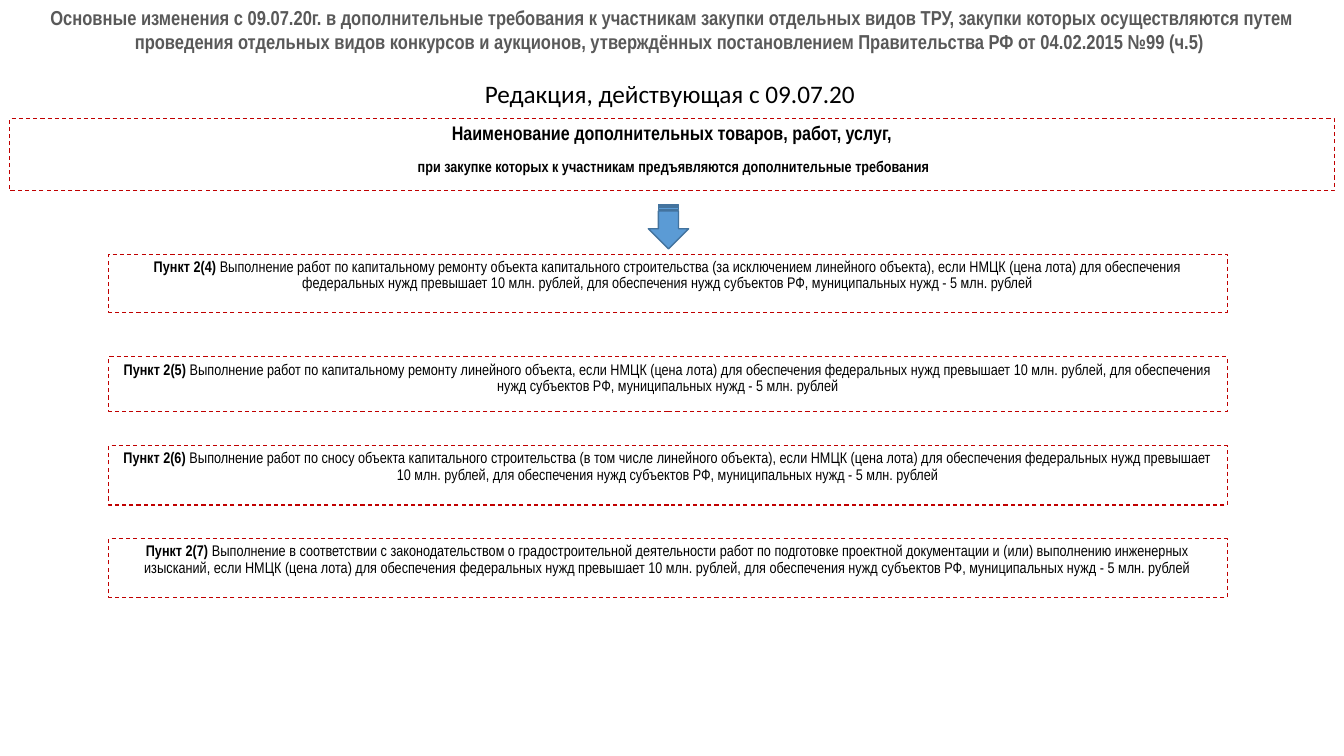
from pptx import Presentation
from pptx.dml.color import RGBColor
from pptx.enum.dml import MSO_LINE
from pptx.enum.shapes import MSO_SHAPE
from pptx.enum.text import MSO_ANCHOR, MSO_AUTO_SIZE, PP_ALIGN
from pptx.util import Inches, Pt

RECTANGLE = MSO_SHAPE.RECTANGLE
STRIPED_ARROW = MSO_SHAPE.STRIPED_RIGHT_ARROW
DASH = MSO_LINE.DASH
CENTER = PP_ALIGN.CENTER
LEFT = PP_ALIGN.LEFT
TOP = MSO_ANCHOR.TOP
BOTTOM = MSO_ANCHOR.BOTTOM
FIT_SHAPE = MSO_AUTO_SIZE.SHAPE_TO_FIT_TEXT

COLORS = {
    "title": "595959",
    "text": "000000",
    "frame": "C00000",
    "arrow": "5B9BD5",
    "arrow_line": "43739E",
}
NARROW = "Arial Narrow"
BODY = "Calibri"

TITLE = (
    "Основные изменения с 09.07.20г. в дополнительные требования к участникам "
    "закупки отдельных видов ТРУ, закупки которых осуществляются путем проведения "
    "отдельных видов конкурсов и аукционов, утверждённых постановлением "
    "Правительства РФ от 04.02.2015 №99 (ч.5) "
)
THRESHOLD = (
    ", если НМЦК (цена лота) для обеспечения федеральных нужд превышает "
    "10 млн. рублей, для обеспечения нужд субъектов РФ, муниципальных нужд "
    "- 5 млн. рублей"
)
# Clause number, top, height, kind of work
CLAUSES = [
    ("2(4)", 2.52, 0.58, "Выполнение работ по капитальному ремонту объекта "
     "капитального строительства (за исключением линейного объекта)"),
    ("2(5)", 3.54, 0.54, "Выполнение работ по капитальному ремонту линейного объекта"),
    ("2(6)", 4.42, 0.59, "Выполнение работ по сносу объекта капитального "
     "строительства (в том числе линейного объекта)"),
    ("2(7)", 5.34, 0.59, "Выполнение в соответствии с законодательством о "
     "градостроительной деятельности работ по подготовке проектной документации "
     "и (или) выполнению инженерных изысканий"),
]


class SlideBuilder:
    def __init__(self, slide):
        self.slide = slide

    def color(self, name):
        return RGBColor.from_string(COLORS[name])

    def style(self, paragraph, size, font=NARROW, color="text", align=CENTER):
        paragraph.alignment = align
        paragraph.font.size = Pt(size)
        paragraph.font.name = font
        paragraph.font.color.rgb = self.color(color)

    def text(self, left, top, width, height, text, size, font, color, align,
             anchor=TOP, bold=False, wrap=True):
        box = self.slide.shapes.add_textbox(
            Inches(left), Inches(top), Inches(width), Inches(height))
        frame = box.text_frame
        frame.word_wrap = wrap
        frame.vertical_anchor = anchor
        if not wrap:
            frame.auto_size = FIT_SHAPE
        paragraph = frame.paragraphs[0]
        paragraph.text = text
        self.style(paragraph, size, font, color, align)
        paragraph.font.bold = bold

    def shape(self, kind, left, top, width, height, line, line_width):
        shape = self.slide.shapes.add_shape(
            kind, Inches(left), Inches(top), Inches(width), Inches(height))
        shape.shadow.inherit = False
        shape.line.color.rgb = self.color(line)
        shape.line.width = Pt(line_width)
        return shape

    def framed(self, left, top, width, height, paragraphs):
        """Each paragraph is a size and a list of (text, bold) runs."""
        shape = self.shape(RECTANGLE, left, top, width, height, "frame", 0.75)
        shape.fill.background()
        shape.line.dash_style = DASH
        frame = shape.text_frame
        frame.word_wrap = True
        frame.vertical_anchor = TOP
        for index, (size, runs) in enumerate(paragraphs):
            paragraph = frame.add_paragraph() if index else frame.paragraphs[0]
            self.style(paragraph, size)
            paragraph.line_spacing = 0.9
            paragraph.space_before = Pt(10)
            for text, bold in runs:
                run = paragraph.add_run()
                run.text = text
                run.font.bold = bold

    def down_arrow(self, left, top, length, breadth):
        arrow = self.shape(STRIPED_ARROW, left, top, length, breadth, "arrow_line", 1)
        arrow.rotation = 90
        arrow.fill.solid()
        arrow.fill.fore_color.rgb = self.color("arrow")


def main():
    presentation = Presentation()
    presentation.slide_width = Inches(13.33)
    presentation.slide_height = Inches(7.5)
    builder = SlideBuilder(presentation.slides.add_slide(presentation.slide_layouts[6]))

    # Title and edition
    builder.text(0, 0, 13.33, 0.58, TITLE, 14.4, NARROW, "title", CENTER,
                 anchor=BOTTOM, bold=True)
    builder.text(4.71, 0.73, 3.91, 0.4, "Редакция, действующая с 09.07.20",
                 18, BODY, "text", LEFT, wrap=False)

    # Heading frame and arrow to the clauses
    builder.framed(0.09, 1.18, 13.15, 0.71, [
        (14, [("Наименование дополнительных товаров, работ, услуг,", True)]),
        (11, [(" при закупке которых к участникам предъявляются "
               "дополнительные требования", True)]),
    ])
    builder.down_arrow(6.41, 2.05, 0.44, 0.4)

    # Clauses
    for number, top, height, work in CLAUSES:
        builder.framed(1.08, top, 11.09, height, [
            (11, [(f"Пункт {number} ", True), (work + THRESHOLD, False)]),
        ])

    presentation.save("out.pptx")


if __name__ == "__main__":
    main()
